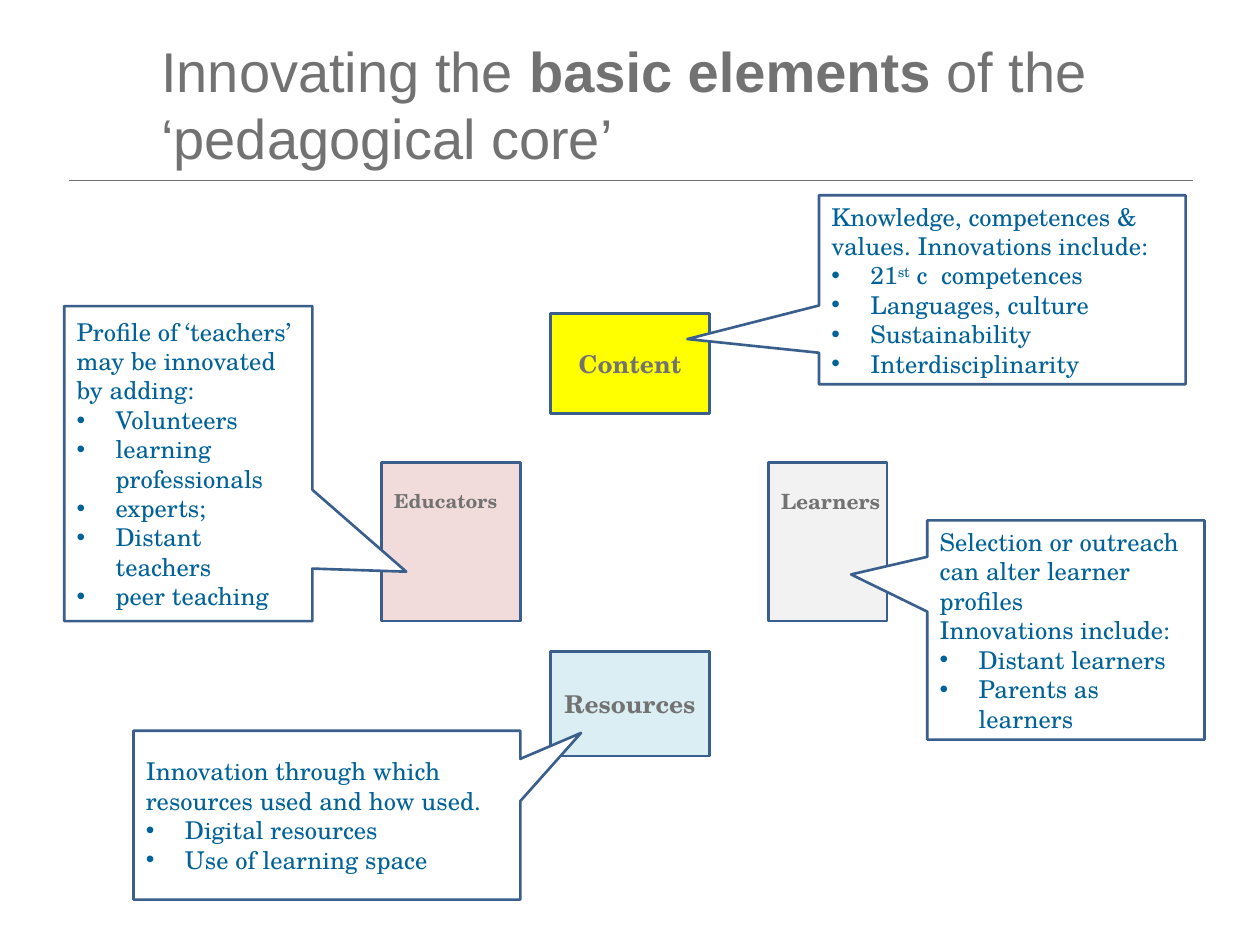
from dataclasses import dataclass

from lxml import etree
from pptx import Presentation
from pptx.dml.color import RGBColor as RGB
from pptx.enum.shapes import MSO_CONNECTOR as LINK, MSO_SHAPE as SHAPE
from pptx.enum.text import MSO_ANCHOR as ANCHOR, MSO_AUTO_SIZE as FIT, PP_ALIGN as ALIGN
from pptx.oxml.ns import qn
from pptx.util import Inches, Pt


@dataclass(frozen=True)
class Theme:
    gray: RGB = RGB.from_string("727272")
    blue: RGB = RGB.from_string("006299")
    edge: RGB = RGB.from_string("3A5F8C")
    white: RGB = RGB.from_string("FFFFFF")
    rose: RGB = RGB.from_string("F2DCDB")
    pale: RGB = RGB.from_string("F2F2F2")
    aqua: RGB = RGB.from_string("DBEEF4")
    yellow: RGB = RGB.from_string("FFFF00")
    head: str = "Arial"
    body: str = "TeX Gyre Schola"
    title: int = 32
    text: int = 14


theme = Theme()


def style(para, font, size, color, bold=None):
    for run in para.runs:
        run.font.name = font
        run.font.size = Pt(size)
        run.font.color.rgb = color
        if bold is not None:
            run.font.bold = bold


def add_box(kind, place, fill):
    box = slide.shapes.add_shape(kind, *map(Inches, place))
    box.shadow.inherit = False
    box.fill.solid()
    box.fill.fore_color.rgb = fill
    box.line.color.rgb = theme.edge
    box.line.width = Pt(1.5)
    box.text_frame.word_wrap = True
    box.text_frame.vertical_anchor = ANCHOR.MIDDLE
    return box


deck = Presentation()
deck.slide_width, deck.slide_height = Inches(10), Inches(7.5)
slide = deck.slides.add_slide(deck.slide_layouts[5])

# Title and rule
title = slide.shapes.title
title.left, title.top = Inches(1.18), Inches(0.26)
title.width, title.height = Inches(8.11), Inches(1.12)
frame = title.text_frame
frame.word_wrap = True
frame.auto_size = FIT.NONE
frame.vertical_anchor = ANCHOR.MIDDLE
para = frame.paragraphs[0]
para.alignment = ALIGN.LEFT
for part in ("Innovating the ", "basic elements ", "of the ‘pedagogical core’"):
    para.add_run().text = part
style(para, theme.head, theme.title, theme.gray, False)
para.runs[1].font.bold = True

rule = slide.shapes.add_connector(
    LINK.STRAIGHT, Inches(0.55), Inches(1.43), Inches(9.47), Inches(1.43))
rule.line.color.rgb = theme.gray
rule.line.width = Pt(0.5)
etree.SubElement(rule._element.spPr, qn("a:effectLst"))

# Four core elements
cores = [
    ("", (3.03, 3.67, 1.1, 1.26), theme.rose),
    ("", (6.1, 3.67, 0.94, 1.26), theme.pale),
    ("Resources", (4.37, 5.17, 1.26, 0.83), theme.aqua),
    ("Content", (4.37, 2.49, 1.26, 0.79), theme.yellow),
]
for name, place, fill in cores:
    box = add_box(SHAPE.RECTANGLE, place, fill)
    if name:
        box.text_frame.text = name
        para = box.text_frame.paragraphs[0]
        para.alignment = ALIGN.CENTER
        style(para, theme.body, theme.text, theme.gray, True)

# Labels near the top of the side elements
labels = [
    ("Educators", (3.03, 3.83, 1.1, 0.29), 11),
    ("Learners", (6.1, 3.83, 1.02, 0.3), 12),
]
for name, place, size in labels:
    label = slide.shapes.add_textbox(*map(Inches, place))
    label.text_frame.word_wrap = True
    label.text_frame.auto_size = FIT.SHAPE_TO_FIT_TEXT
    label.text_frame.text = name
    style(label.text_frame.paragraphs[0], theme.body, size, theme.gray, True)

# Callouts: place, pointer tip, plain lines, bulleted lines
notes = [
    ((7.36, 4.13, 2.2, 1.74), (-0.775, -0.253),
     ["Selection or outreach can alter learner profiles", "Innovations include:"],
     ["Distant learners", "Parents as learners"]),
    ((0.51, 2.43, 1.97, 2.5), (0.878, 0.343),
     ["Profile of ‘teachers’ may be innovated by adding:"],
     ["Volunteers", "learning professionals", "experts;",
      "Distant teachers", "peer teaching"]),
    ((1.06, 5.8, 3.07, 1.34), (0.657, -0.487),
     ["Innovation through which resources used and how used."],
     ["Digital resources", "Use of learning space"]),
    ((6.5, 1.55, 2.91, 1.5), (-0.859, 0.261),
     ["Knowledge, competences & values. Innovations include:"],
     [("21", "st", " c  competences"), "Languages, culture",
      "Sustainability", "Interdisciplinarity"]),
]
for place, tip, intro, items in notes:
    note = add_box(SHAPE.RECTANGULAR_CALLOUT, place, theme.white)
    note.adjustments[0], note.adjustments[1] = tip
    frame = note.text_frame
    for i, line in enumerate(intro + items):
        para = frame.add_paragraph() if i else frame.paragraphs[0]
        para.alignment = ALIGN.LEFT
        if i >= len(intro):
            props = para._p.get_or_add_pPr()
            props.set("marL", str(Inches(0.31)))
            props.set("indent", str(-Inches(0.31)))
            etree.SubElement(props, qn("a:buFont"), typeface=theme.head)
            etree.SubElement(props, qn("a:buChar"), char="•")
        parts = [line] if isinstance(line, str) else line
        for part in parts:
            para.add_run().text = part
        style(para, theme.body, theme.text, theme.blue)
        if len(parts) > 1:
            para.runs[1].font._element.set("baseline", "30000")

deck.save("out.pptx")
